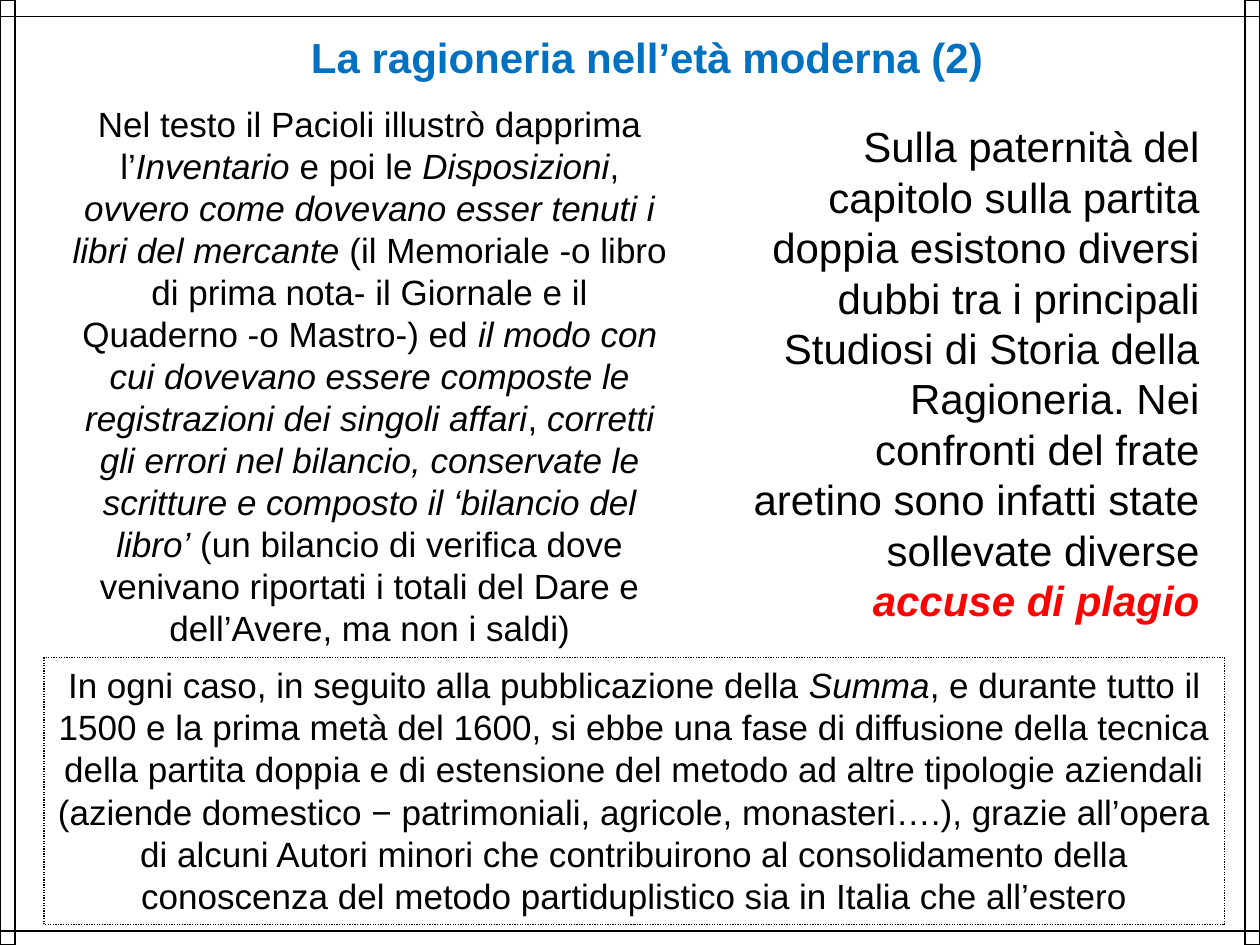
"""Build the slide on Pacioli and modern-age accounting."""
from dataclasses import dataclass

from lxml.etree import SubElement
from pptx import Presentation
from pptx.dml.color import RGBColor
from pptx.enum.dml import MSO_LINE
from pptx.enum.shapes import MSO_CONNECTOR, MSO_SHAPE
from pptx.enum.text import MSO_ANCHOR, MSO_AUTO_SIZE, PP_ALIGN
from pptx.oxml.ns import qn
from pptx.util import Inches, Pt


@dataclass(frozen=True)
class Theme:
    font: str = "Arial"
    ink: str = "000000"
    title: str = "0070C0"
    alert: str = "FF0000"
    large: int = 24
    normal: int = 20
    line: float = 0.75


THEME = Theme()
WIDTH, HEIGHT = 10, 7.5
BAND = 0.12
ITALIC = {"italic": True}

TITLE = [("La ragioneria nell’età moderna (2)", {"bold": True, "color": THEME.title})]
PACIOLI = [
    ("Nel testo il Pacioli illustrò dapprima l’", {}),
    ("Inventario ", ITALIC),
    ("e poi le ", {}),
    ("Disposizioni", ITALIC),
    (", ", {}),
    ("ovvero come dovevano esser tenuti i libri del mercante ", ITALIC),
    ("(il Memoriale -o libro di prima nota- il Giornale e il Quaderno -o Mastro-) ed ", {}),
    ("il modo con cui dovevano essere composte le registrazioni dei singoli affari", ITALIC),
    (", ", {}),
    ("corretti gli errori nel bilancio, conservate le scritture e composto il "
     "‘bilancio del libro’", ITALIC),
    (" (un bilancio di verifica dove venivano riportati i totali del Dare e dell’Avere, "
     "ma non i saldi)", {}),
]
DOUBTS = [
    ("Sulla paternità del capitolo sulla partita doppia esistono diversi dubbi tra i "
     "principali Studiosi di Storia della Ragioneria. Nei confronti del frate aretino "
     "sono infatti state sollevate diverse ", {}),
    ("accuse di plagio", {"bold": True, "italic": True, "color": THEME.alert}),
]
SPREAD = [
    ("In ogni caso, in seguito alla pubblicazione della ", {}),
    ("Summa", ITALIC),
    (", e durante tutto il 1500 e la prima metà del 1600, si ebbe una fase di diffusione "
     "della tecnica della partita doppia e di estensione del metodo ad altre tipologie "
     "aziendali (aziende domestico − patrimoniali, agricole, monasteri….), grazie "
     "all’opera di alcuni Autori minori che contribuirono al consolidamento della "
     "conoscenza del metodo partiduplistico sia in Italia che all’estero", {}),
]


def place(box, left, top, width, height):
    box.left, box.top = Inches(left), Inches(top)
    box.width, box.height = Inches(width), Inches(height)


def write(box, spans, size=THEME.normal, align=PP_ALIGN.CENTER, wrap=True):
    frame = box.text_frame
    frame.auto_size = MSO_AUTO_SIZE.NONE
    frame.word_wrap = wrap
    frame.vertical_anchor = MSO_ANCHOR.TOP
    para = frame.paragraphs[0]
    para.alignment = align
    para.space_before = Pt(0)
    properties = para._p.get_or_add_pPr()
    properties.set("marL", "0")
    properties.set("indent", "0")
    SubElement(properties, qn("a:buNone"))
    for text, style in spans:
        span = para.add_run()
        span.text = text
        font = span.font
        font.name, font.size = THEME.font, Pt(size)
        font.bold = style.get("bold", False)
        font.italic = style.get("italic", False)
        font.color.rgb = RGBColor.from_string(style.get("color", THEME.ink))


def outline(shape):
    shape.line.color.rgb = RGBColor.from_string(THEME.ink)
    shape.line.width = Pt(THEME.line)


def add_frame(page, left, top, width, height):
    box = page.shapes.add_shape(MSO_SHAPE.RECTANGLE, 0, 0, 0, 0)
    place(box, left, top, width, height)
    box.shadow.inherit = False
    box.fill.background()
    outline(box)
    return box


def add_rule(page, top):
    rule = page.shapes.add_connector(
        MSO_CONNECTOR.STRAIGHT, 0, Inches(top), Inches(WIDTH), Inches(top))
    outline(rule)
    SubElement(rule._element.spPr, qn("a:effectLst"))


def main():
    deck = Presentation()
    deck.slide_width, deck.slide_height = Inches(WIDTH), Inches(HEIGHT)
    page = deck.slides.add_slide(deck.slide_layouts.get_by_name("Two Content"))
    title, left_body, right_body = page.placeholders

    for left in (0, WIDTH - BAND):
        add_frame(page, left, 0, BAND, HEIGHT)
    for top in (0.13, HEIGHT - 0.11):
        add_rule(page, top)

    place(title, 2.34, 0.2, 5.59, 0.51)
    write(title, TITLE, size=THEME.large, wrap=False)
    place(left_body, 0.47, 0.76, 4.93, 4.48)
    write(left_body, PACIOLI)
    place(right_body, 5.87, 0.91, 3.75, 4.14)
    write(right_body, DOUBTS, size=THEME.large, align=PP_ALIGN.RIGHT)

    conclusion = add_frame(page, 0.35, 5.22, 9.37, 2.12)
    conclusion.line.dash_style = MSO_LINE.ROUND_DOT
    write(conclusion, SPREAD)

    deck.save("out.pptx")


if __name__ == "__main__":
    main()
